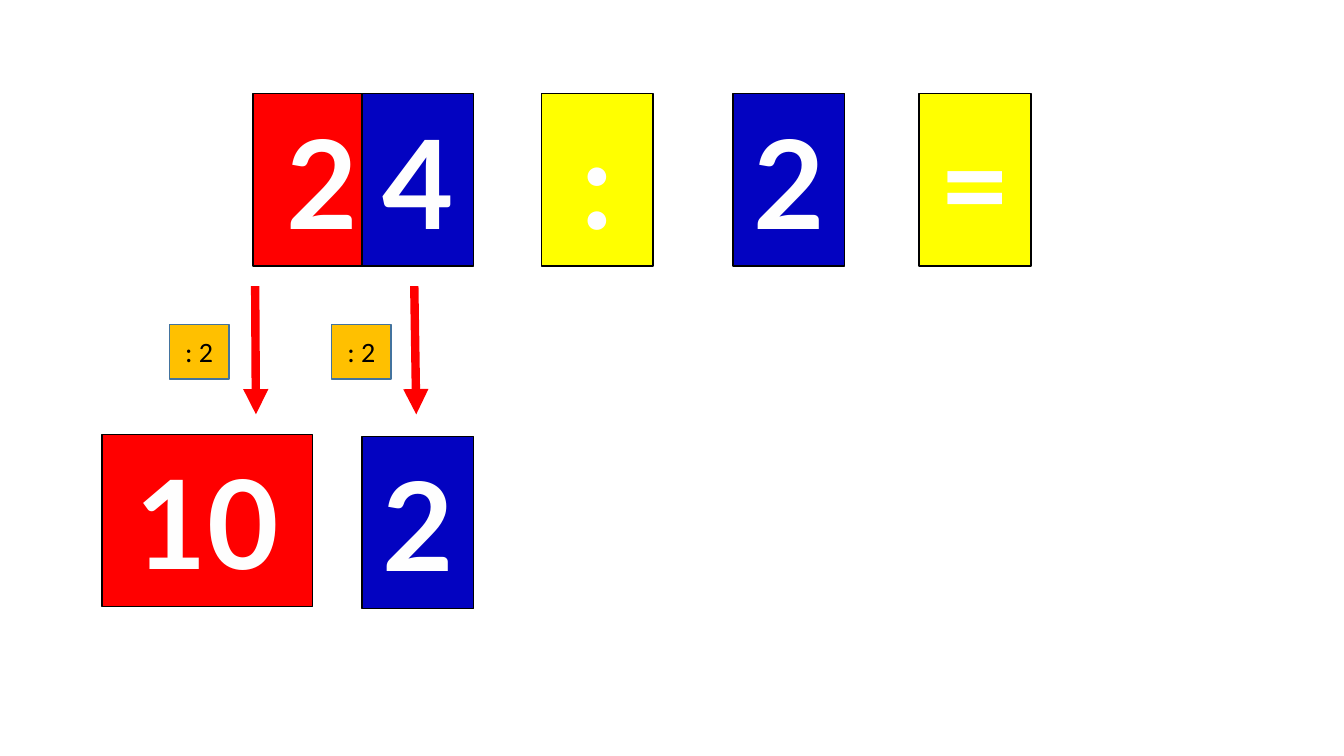
import pptx
import pptx.util
import pptx.dml.color
import pptx.enum.shapes
import pptx.enum.text
import pptx.oxml
import pptx.oxml.ns

Cm, Pt = pptx.util.Cm, pptx.util.Pt
RGBColor = pptx.dml.color.RGBColor

RED = RGBColor(0xFF, 0x00, 0x00)
BLUE = RGBColor(0x03, 0x03, 0xC1)
YELLOW = RGBColor(0xFF, 0xFF, 0x00)
ORANGE = RGBColor(0xFF, 0xC0, 0x00)
STEEL = RGBColor(0x43, 0x73, 0x9E)
OUTLINE = RGBColor(0x5B, 0x9B, 0xD5)
BLACK = RGBColor(0x00, 0x00, 0x00)
WHITE = RGBColor(0xFE, 0xFE, 0xFE)

# Content: text, left, top, width (cm), fill
TOP, WIDE, NARROW = 2.36, 5.31, 2.82
PROBLEM = [
    ("20", 6.38, TOP, WIDE, RED),
    ("4", 9.12, TOP, NARROW, BLUE),
    (":", 13.64, TOP, NARROW, YELLOW),
    ("2", 18.47, TOP, NARROW, BLUE),
    ("=", 23.16, TOP, NARROW, YELLOW),
]
RESULTS = [
    ("10", 2.57, 10.95, WIDE, RED),
    ("2", 9.12, 11, NARROW, BLUE),
]
STEPS = [(": 2", 4.27), (": 2", 8.36)]
ARROWS = [(6.43, 6.45), (10.44, 10.49)]  # x at start and end

CARD_HEIGHT = 4.34
STEP_TOP, STEP_WIDTH, STEP_HEIGHT = 8.18, 1.5, 1.37
ARROW_TOP, ARROW_BOTTOM = 7.21, 10.44
CARD_FONT = {"name": "Lato", "size": Pt(88), "bold": True}
STEP_FONT = {"name": "Calibri", "size": Pt(20), "bold": False}

DRAWING = pptx.oxml.ns.nsdecls("a")
TEXT_OUTLINE = (f'<a:ln {DRAWING} w="9525"><a:solidFill><a:srgbClr val="{OUTLINE}"/>'
                '</a:solidFill></a:ln>')
TEXT_SHADOW = (f'<a:effectLst {DRAWING}><a:outerShdw blurRad="12700" dist="38100" dir="2700000">'
               f'<a:srgbClr val="{OUTLINE}"/></a:outerShdw></a:effectLst>')


def add_box(text, left, top, width, height, fill, border, ink, font_format):
    box = slide.shapes.add_shape(pptx.enum.shapes.MSO_SHAPE.RECTANGLE,
                                 Cm(left), Cm(top), Cm(width), Cm(height))
    box.shadow.inherit = False
    box.fill.solid()
    box.fill.fore_color.rgb = fill
    box.line.color.rgb = border
    box.line.width = Pt(1)
    box.text_frame.word_wrap = True
    box.text_frame.vertical_anchor = pptx.enum.text.MSO_ANCHOR.MIDDLE
    line = box.text_frame.paragraphs[0]
    line.alignment = pptx.enum.text.PP_ALIGN.CENTER
    run = line.add_run()
    run.text = text
    for attribute, value in font_format.items():
        setattr(run.font, attribute, value)
    run.font.color.rgb = ink
    return run


def add_card(text, left, top, width, fill):
    run = add_box(text, left, top, width, CARD_HEIGHT, fill, BLACK, WHITE, CARD_FONT)
    # Outlined, shadowed and slightly spaced digits
    properties = run.font._element
    properties.set("spc", "50")
    properties.insert(0, pptx.oxml.parse_xml(TEXT_OUTLINE))
    properties.insert(2, pptx.oxml.parse_xml(TEXT_SHADOW))


def add_arrow(start_x, end_x):
    arrow = slide.shapes.add_connector(pptx.enum.shapes.MSO_CONNECTOR.STRAIGHT,
                                       Cm(start_x), Cm(ARROW_TOP), Cm(end_x), Cm(ARROW_BOTTOM))
    arrow.line.color.rgb = RED
    arrow.line.width = Pt(6)
    arrow.line._get_or_add_ln().append(
        pptx.oxml.parse_xml(f'<a:tailEnd {DRAWING} type="triangle"/>'))
    arrow._element.spPr.append(pptx.oxml.parse_xml(f'<a:effectLst {DRAWING}/>'))


deck = pptx.Presentation()
deck.slide_width, deck.slide_height = Cm(33.87), Cm(19.05)
slide = deck.slides.add_slide(deck.slide_layouts[6])

# Division problem
for card in PROBLEM:
    add_card(*card)

# Arrows from each digit to its result
for ends in ARROWS:
    add_arrow(*ends)

# Partial results
for card in RESULTS:
    add_card(*card)

# Division steps beside the arrows
for step, step_left in STEPS:
    add_box(step, step_left, STEP_TOP, STEP_WIDTH, STEP_HEIGHT, ORANGE, STEEL, BLACK, STEP_FONT)

deck.save("out.pptx")
